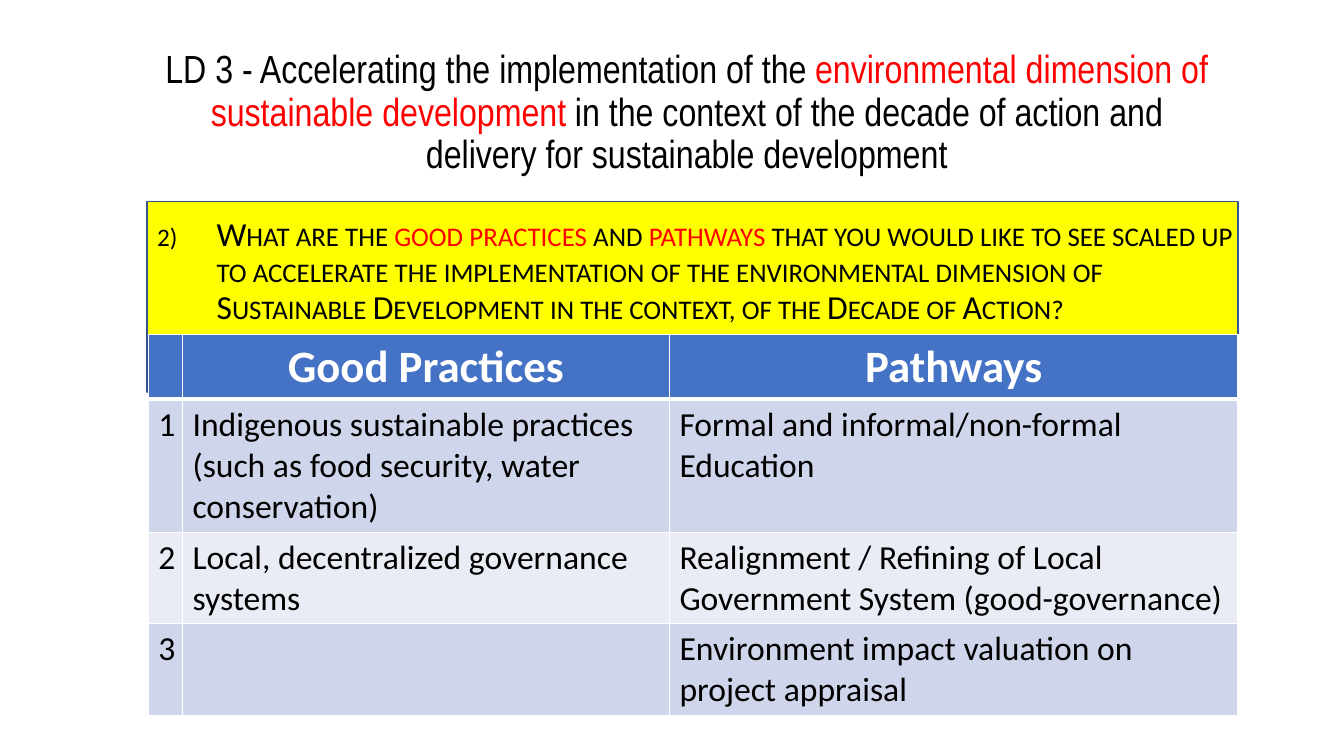
"""Build a slide with a title, a yellow question panel and a table of answers."""
from dataclasses import dataclass

from lxml.etree import SubElement
from pptx import Presentation
from pptx.dml.color import RGBColor
from pptx.enum.shapes import MSO_SHAPE
from pptx.enum.text import MSO_ANCHOR, PP_ALIGN
from pptx.oxml.ns import qn
from pptx.slide import Slide
from pptx.table import _Cell
from pptx.text.text import TextFrame, _Paragraph
from pptx.util import Emu, Inches, Pt

WIDTH, HEIGHT = Inches(13.33), Inches(7.5)


@dataclass(frozen=True)
class Theme:
    """Colours, fonts and type sizes."""
    black: str = "000000"
    white: str = "FFFFFF"
    red: str = "FF0000"
    yellow: str = "FFFF00"
    edge: str = "325491"
    head: str = "4472C4"
    odd: str = "CFD5EA"
    even: str = "E9EBF5"
    narrow: str = "Arial Narrow"
    plain: str = "Calibri"
    title: int = 28
    label: int = 32
    text: int = 24


@dataclass(frozen=True)
class Box:
    """A frame in percent of the slide's width and height."""
    left: float
    top: float
    width: float
    height: float

    def frame(self) -> tuple[Emu, Emu, Emu, Emu]:
        """Return the frame as lengths."""
        return across(self.left), down(self.top), across(self.width), down(self.height)


@dataclass(frozen=True)
class Part:
    """A piece of text and its colour."""
    text: str
    color: str


THEME = Theme()
PANEL = Box(10.95, 26.67, 81.17, 25.2)
QUERY = Box(10.95, 28.13, 82.22, 71.07)
TITLE = Box(10.95, 5.33, 80.27, 19.33)
TABLE = Box(11.03, 44.27, 81.09, 50.26)
COLUMNS = (2.55, 36.23, 42.31)
ROWS = (8.53, 17.6, 12.13, 12.13)
INDENT = 4.43

HEADING = (
    Part("LD 3 - Accelerating the implementation of the ", THEME.black),
    Part("environmental dimension of sustainable development ", THEME.red),
    Part("in the context of the decade of action and delivery for sustainable development",
         THEME.black),
)
QUESTION = (
    Part("What are the ", THEME.black),
    Part("good practices ", THEME.red),
    Part("and ", THEME.black),
    Part("pathways", THEME.red),
    Part(" that you would like to see scaled up to accelerate the implementation of the "
         "environmental dimension of Sustainable Development in the context, of the "
         "Decade of Action?", THEME.black),
)
ANSWERS = (
    ("", "Good Practices", "Pathways"),
    ("1", "Indigenous sustainable practices (such as food security, water conservation)",
     "Formal and informal/non-formal Education"),
    ("2", "Local, decentralized governance systems",
     "Realignment / Refining of Local Government System (good-governance)"),
    ("3", "", "Environment impact valuation on project appraisal"),
)


def across(share: float) -> Emu:
    """Turn a percent of the width into a length."""
    return Emu(round(WIDTH * share / 100))


def down(share: float) -> Emu:
    """Turn a percent of the height into a length."""
    return Emu(round(HEIGHT * share / 100))


def paint(color: str) -> RGBColor:
    """Turn a hex code into a colour."""
    return RGBColor.from_string(color)


def write(frame: TextFrame, parts: tuple[Part, ...], face: str, size: int) -> _Paragraph:
    """Fill the first paragraph with coloured parts."""
    line = frame.paragraphs[0]
    line.font.name, line.font.size = face, Pt(size)
    for part in parts:
        run = line.add_run()
        run.text = part.text
        run.font.color.rgb = paint(part.color)
    return line


def add_text(slide: Slide, box: Box, parts: tuple[Part, ...], face: str, size: int) -> TextFrame:
    """Add a wrapped text box with tight lines."""
    frame = slide.shapes.add_textbox(*box.frame()).text_frame
    frame.word_wrap = True
    write(frame, parts, face, size).line_spacing = 0.9
    return frame


def number(line: _Paragraph, start: int) -> None:
    """Give a paragraph a hanging number and small capitals."""
    props = line._p.get_or_add_pPr()
    props.set("marL", str(across(INDENT)))
    props.set("indent", str(-across(INDENT)))
    base = props.find(qn("a:defRPr"))
    base.set("cap", "small")
    size = SubElement(props, qn("a:buSzPct"), val="75000")
    mark = SubElement(props, qn("a:buAutoNum"), type="arabicParenR", startAt=str(start))
    base.addprevious(size)
    base.addprevious(mark)


def add_panel(slide: Slide) -> None:
    """Draw the yellow panel."""
    panel = slide.shapes.add_shape(MSO_SHAPE.RECTANGLE, *PANEL.frame())
    panel.shadow.inherit = False
    panel.fill.solid()
    panel.fill.fore_color.rgb = paint(THEME.yellow)
    panel.line.color.rgb = paint(THEME.edge)
    panel.line.width = Pt(1)


def border(cell: _Cell, top: int, bottom: int) -> None:
    """Draw white rules round a cell."""
    props = cell._tc.get_or_add_tcPr()
    for side, width in (("L", 1), ("R", 1), ("T", top), ("B", bottom)):
        rule = SubElement(props, qn(f"a:ln{side}"), w=str(Pt(width)))
        fill = SubElement(rule, qn("a:solidFill"))
        SubElement(fill, qn("a:srgbClr"), val=THEME.white)


def add_table(slide: Slide) -> None:
    """Draw the table of answers."""
    table = slide.shapes.add_table(len(ROWS), len(COLUMNS), *TABLE.frame()).table
    for column, share in zip(table.columns, COLUMNS):
        column.width = across(share)
    for row, share in zip(table.rows, ROWS):
        row.height = down(share)
    for place, words in enumerate(ANSWERS):
        header = place == 0
        fill = THEME.head if header else THEME.odd if place % 2 else THEME.even
        color = THEME.white if header else THEME.black
        size = THEME.label if header else THEME.text
        for cell, text in zip(table.rows[place].cells, words):
            border(cell, 3 if place == 1 else 1, 3 if header else 1)
            cell.fill.solid()
            cell.fill.fore_color.rgb = paint(fill)
            if text:
                line = write(cell.text_frame, (Part(text, color),), THEME.plain, size)
                line.font.bold = header
                line.alignment = PP_ALIGN.CENTER if header else PP_ALIGN.LEFT


def main() -> None:
    """Build and save the slide."""
    deck = Presentation()
    deck.slide_width, deck.slide_height = WIDTH, HEIGHT
    slide = deck.slides.add_slide(deck.slide_layouts[6])
    add_panel(slide)
    query = add_text(slide, QUERY, QUESTION, THEME.plain, THEME.text).paragraphs[0]
    query.space_before = Pt(10)
    number(query, 2)
    title = add_text(slide, TITLE, HEADING, THEME.narrow, THEME.title)
    title.vertical_anchor = MSO_ANCHOR.MIDDLE
    title.paragraphs[0].alignment = PP_ALIGN.CENTER
    add_table(slide)
    deck.save("out.pptx")


if __name__ == "__main__":
    main()
